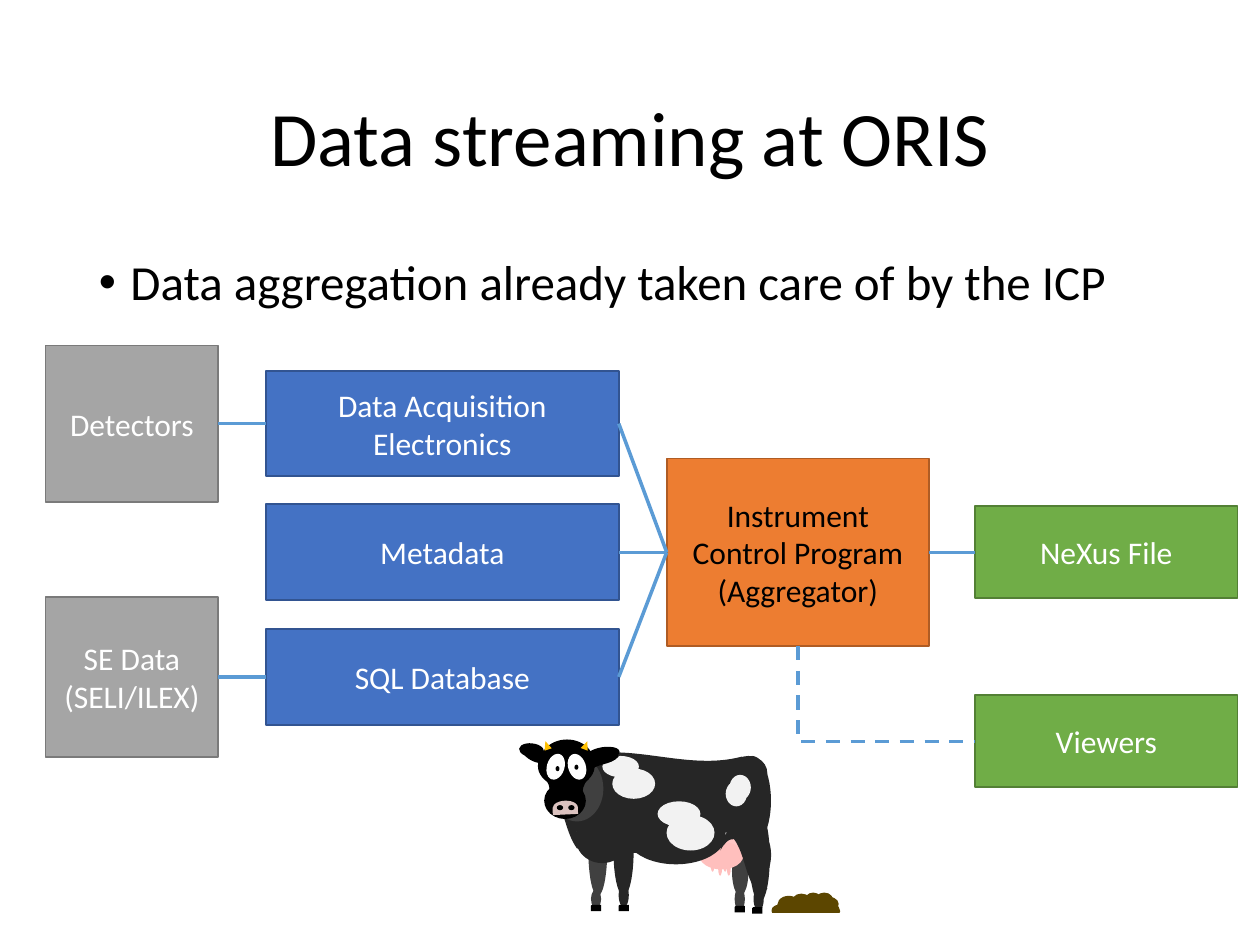
from dataclasses import dataclass

from lxml import etree
from pptx import Presentation
from pptx.dml.color import RGBColor
from pptx.enum.dml import MSO_LINE
from pptx.enum.shapes import MSO_CONNECTOR, MSO_SHAPE
from pptx.enum.text import MSO_ANCHOR, PP_ALIGN
from pptx.oxml.ns import qn
from pptx.util import Pt

RECT = MSO_SHAPE.RECTANGLE
OVAL = MSO_SHAPE.OVAL
WAVE = MSO_SHAPE.WAVE
MOON = MSO_SHAPE.MOON
HOOF = MSO_SHAPE.SNIP_1_RECTANGLE
HORN = MSO_SHAPE.FLOWCHART_EXTRACT
MUZZLE = MSO_SHAPE.FLOWCHART_DELAY
CLOUD = MSO_SHAPE.CLOUD
STRAIGHT = MSO_CONNECTOR.STRAIGHT
ELBOW = MSO_CONNECTOR.ELBOW
DASH = MSO_LINE.DASH
MIDDLE = MSO_ANCHOR.MIDDLE
TOP_ANCHOR = MSO_ANCHOR.TOP
CENTER = PP_ALIGN.CENTER
LEFT_ALIGN = PP_ALIGN.LEFT
BOTTOM, LEFT, RIGHT = 2, 1, 3
FONT = "Calibri"

COLORS = {
    "black": "000000", "white": "FFFFFF", "link": "5B9BD5",
    "source": "A5A5A5", "source_edge": "7A7A7A",
    "store": "4472C4", "store_edge": "325491",
    "hub": "ED7D31", "hub_edge": "AF5C24",
    "output": "70AD47", "output_edge": "538035",
    "hide": "262626", "shade": "404040", "patch": "F2F2F2",
    "udder": "FFBFBD", "horn": "FFC000", "muzzle": "DBC2BF", "dung": "5C4600",
}


@dataclass
class Box:
    role: str
    lines: tuple[str, ...]
    x: float
    y: float
    w: float
    h: float
    ink: str = "white"


@dataclass
class Part:
    kind: int
    x: float
    y: float
    w: float
    h: float
    color: str
    rot: float = 0
    flip: str = ""
    skew: float = 0
    opacity: int = 100
    outlined: bool = False


SOURCE_X, SOURCE_W = 26, 98.8
STORE_X, STORE_W = 152, 201.6
HUB_X, OUTPUT_X, HUB_W = 381, 557.3, 149.8

BOXES = {
    "detectors": Box("source", ("Detectors",), SOURCE_X, 197.4, SOURCE_W, 89.4),
    "se_data": Box("source", ("SE Data", "(SELI/ILEX)"), SOURCE_X, 341.2, SOURCE_W, 91.2),
    "electronics": Box("store", ("Data Acquisition Electronics",), STORE_X, 212.2, STORE_W, 59.8),
    "database": Box("store", ("SQL Database",), STORE_X, 359.4, STORE_W, 54.8),
    "metadata": Box("store", ("Metadata",), STORE_X, 288.2, STORE_W, 54.8),
    "icp": Box("hub", ("Instrument Control Program", "(Aggregator)"),
               HUB_X, 262, HUB_W, 107.2, "black"),
    "nexus": Box("output", ("NeXus File",), OUTPUT_X, 289.3, HUB_W, 52.6),
    "viewers": Box("output", ("Viewers",), OUTPUT_X, 397.3, HUB_W, 52.6),
}

LINKS = [
    ("detectors", "electronics"), ("se_data", "database"), ("electronics", "icp"),
    ("metadata", "icp"), ("database", "icp"), ("icp", "nexus"),
]

COW = [
    Part(OVAL, 336.2, 460.8, 10.8, 51.1, "shade"),
    Part(OVAL, 418.3, 483.8, 9.4, 28.1, "shade"),
    Part(OVAL, 399.6, 481, 25.2, 15.8, "udder"),
    *[Part(OVAL, x, y, 2.2, 8.6, "udder")
      for x, y in ((415.4, 491.8), (410.4, 491.8), (406.1, 489.6), (413.3, 489.6))],
    Part(OVAL, 413.3, 478.1, 9.4, 10.8, "udder", opacity=89),
    Part(RECT, 333.4, 434.9, 100.8, 41, "hide"),
    Part(RECT, 334.1, 444.2, 70.6, 43.2, "hide"),
    Part(OVAL, 416.9, 432, 21.6, 19.4, "hide"),
    Part(OVAL, 419, 432, 21.6, 51.1, "hide"),
    Part(OVAL, 428.4, 464.4, 11.5, 51.1, "hide"),
    Part(OVAL, 425.5, 474.5, 15.1, 28.1, "hide"),
    Part(OVAL, 357.8, 460.8, 56.9, 33.1, "hide"),
    Part(WAVE, 329.8, 429.8, 94.3, 20.2, "hide", flip="hv"),
    Part(OVAL, 329, 465.1, 30.2, 28.1, "hide"),
    Part(OVAL, 350.6, 460.8, 11.5, 51.1, "hide"),
    Part(OVAL, 337.7, 508.3, 5.8, 10.8, "shade"),
    Part(OVAL, 353.5, 504.7, 5.8, 13.7, "hide"),
    Part(OVAL, 430.6, 506.9, 5.8, 13.7, "hide"),
    *[Part(HOOF, x, y, 5.8, 3.6, "black", flip="h")
      for x, y in ((429.8, 518.4), (353.5, 517), (337.7, 517))],
    Part(WAVE, 410.4, 488.9, 36, 7.9, "hide", 65.3, "hv"),
    Part(MOON, 411.8, 473, 15.1, 13, "hide", 279.5, "h"),
    Part(OVAL, 419.8, 506.9, 5.8, 13.7, "shade"),
    Part(WAVE, 307.4, 466.6, 36, 5.8, "hide", 66.4, "hv", -0.03),
    Part(OVAL, 326.9, 465.1, 10.1, 10.8, "hide"),
    Part(OVAL, 416.9, 442.8, 12.2, 14.4, "patch"),
    Part(OVAL, 380.9, 465.8, 27.4, 20.2, "patch"),
    Part(OVAL, 375.8, 457.9, 24.5, 14.4, "patch"),
    Part(OVAL, 414.7, 446.4, 12.2, 14.4, "patch"),
    Part(HOOF, 419.8, 517.7, 5.8, 3.6, "black", flip="h"),
    Part(OVAL, 314.6, 432, 30.2, 37.4, "shade"),
    Part(OVAL, 349.9, 439.2, 24.5, 17.3, "patch"),
    Part(OVAL, 344.2, 432, 20.9, 12.2, "patch"),
    Part(WAVE, 334.1, 431.3, 19.4, 6.5, "black", 152.6),
    Part(OVAL, 307.4, 425.5, 32.4, 24.5, "black"),
    Part(OVAL, 308.9, 422.6, 30.2, 24.5, "black"),
    Part(OVAL, 311, 447.1, 23.8, 20.9, "black"),
    Part(WAVE, 317.5, 448.6, 22.3, 11.5, "black", 289.3, "h"),
    Part(WAVE, 307.4, 447.1, 22.3, 11.5, "black", 67.4, skew=-0.03),
    Part(HORN, 332.6, 423.4, 4.3, 5, "horn", 20.7, "h"),
    Part(HORN, 310.3, 423.4, 4.3, 5, "horn", 341.7, "h"),
    Part(OVAL, 312.5, 430.6, 10.1, 15.1, "white", 16.8),
    Part(OVAL, 324.7, 430.6, 10.1, 15.1, "white", 342.2),
    Part(OVAL, 328.3, 437, 2.2, 2.9, "black"),
    Part(OVAL, 317.5, 437.8, 2.2, 2.9, "black"),
    Part(MUZZLE, 319, 454.3, 7.9, 14.4, "muzzle", 87.3, "h"),
    Part(OVAL, 324.7, 460.1, 3.6, 2.9, "black"),
    Part(OVAL, 318.2, 460.1, 3.6, 2.9, "black"),
    Part(OVAL, 334.8, 427, 19.4, 7.9, "black", 350.6),
    Part(OVAL, 296.6, 424.8, 14.4, 7.9, "black", 6.9),
    Part(OVAL, 297.4, 427, 15.8, 7.9, "black", 28.6),
    Part(CLOUD, 441.4, 510.5, 38.2, 20.9, "dung", outlined=True),
    Part(RECT, 437.8, 522, 49.7, 13.7, "white", outlined=True),
]


def rgb(name: str) -> RGBColor:
    return RGBColor.from_string(COLORS[name])


def write(frame, lines: tuple[str, ...], size: float, ink: str, align, anchor) -> None:
    frame.word_wrap = True
    frame.vertical_anchor = anchor
    for index, line in enumerate(lines):
        paragraph = frame.add_paragraph() if index else frame.paragraphs[0]
        paragraph.alignment = align
        run = paragraph.add_run()
        run.text = line
        run.font.name = FONT
        run.font.size = Pt(size)
        run.font.color.rgb = rgb(ink)


def add_heading(slide, line: str, y: float, h: float, size: float, align, anchor):
    frame = slide.shapes.add_textbox(Pt(49.5), Pt(y), Pt(621), Pt(h)).text_frame
    write(frame, (line,), size, "black", align, anchor)
    paragraph = frame.paragraphs[0]
    paragraph.line_spacing = 0.9
    return paragraph


def add_bullet(paragraph) -> None:
    paragraph.space_before = Pt(10)
    properties = paragraph._p.get_or_add_pPr()
    properties.set("marL", str(Pt(18)))
    properties.set("indent", str(Pt(-18)))
    etree.SubElement(properties, qn("a:buFont")).set("typeface", "Arial")
    etree.SubElement(properties, qn("a:buChar")).set("char", "•")


def add_box(slide, box: Box):
    shape = slide.shapes.add_shape(RECT, Pt(box.x), Pt(box.y), Pt(box.w), Pt(box.h))
    shape.shadow.inherit = False
    shape.fill.solid()
    shape.fill.fore_color.rgb = rgb(box.role)
    shape.line.color.rgb = rgb(f"{box.role}_edge")
    shape.line.width = Pt(1)
    write(shape.text_frame, box.lines, 18, box.ink, CENTER, MIDDLE)
    return shape


def add_link(slide, kind, start, start_side: int, end):
    link = slide.shapes.add_connector(kind, 0, 0, 0, 0)
    link.begin_connect(start, start_side)
    link.end_connect(end, LEFT)
    link.line.color.rgb = rgb("link")
    link.line.width = Pt(2)
    etree.SubElement(link._element.spPr, qn("a:effectLst"))
    return link


def bend_down_then_right(link) -> None:
    across, down = link.width, link.height
    link.left += (across - down) // 2
    link.top += (down - across) // 2
    link.width, link.height = down, across
    properties = link._element.spPr
    frame = properties.find(qn("a:xfrm"))
    frame.set("rot", "16200000")
    frame.set("flipH", "1")
    properties.find(qn("a:prstGeom")).set("prst", "bentConnector2")


def add_part(group, part: Part) -> None:
    shape = group.shapes.add_shape(part.kind, Pt(part.x), Pt(part.y), Pt(part.w), Pt(part.h))
    shape.shadow.inherit = False
    shape.rotation = part.rot
    shape.fill.solid()
    shape.fill.fore_color.rgb = rgb(part.color)
    if part.outlined:
        shape.line.color.rgb = rgb(part.color)
        shape.line.width = Pt(1)
    else:
        shape.line.fill.background()
    if part.skew:
        shape.adjustments[1] = part.skew
    properties = shape._element.spPr
    for axis in part.flip:
        properties.find(qn("a:xfrm")).set(f"flip{axis.upper()}", "1")
    if part.opacity < 100:
        tint = properties.find(qn("a:solidFill"))[0]
        etree.SubElement(tint, qn("a:alpha")).set("val", str(part.opacity * 1000))


def main() -> None:
    deck = Presentation()
    deck.slide_width, deck.slide_height = Pt(720), Pt(540)
    slide = deck.slides.add_slide(deck.slide_layouts[6])
    add_heading(slide, "Data streaming at ORIS", 28.8, 104.4, 44, CENTER, MIDDLE)
    add_bullet(add_heading(slide, "Data aggregation already taken care of by the ICP",
                           144, 342.7, 28, LEFT_ALIGN, TOP_ANCHOR))
    stages = {key: add_box(slide, box) for key, box in BOXES.items()}
    for start, end in LINKS:
        add_link(slide, STRAIGHT, stages[start], RIGHT, stages[end])
    viewer_link = add_link(slide, ELBOW, stages["icp"], BOTTOM, stages["viewers"])
    viewer_link.line.dash_style = DASH
    bend_down_then_right(viewer_link)
    cow = slide.shapes.add_group_shape()
    for part in COW:
        add_part(cow, part)
    deck.save("out.pptx")


if __name__ == "__main__":
    main()
